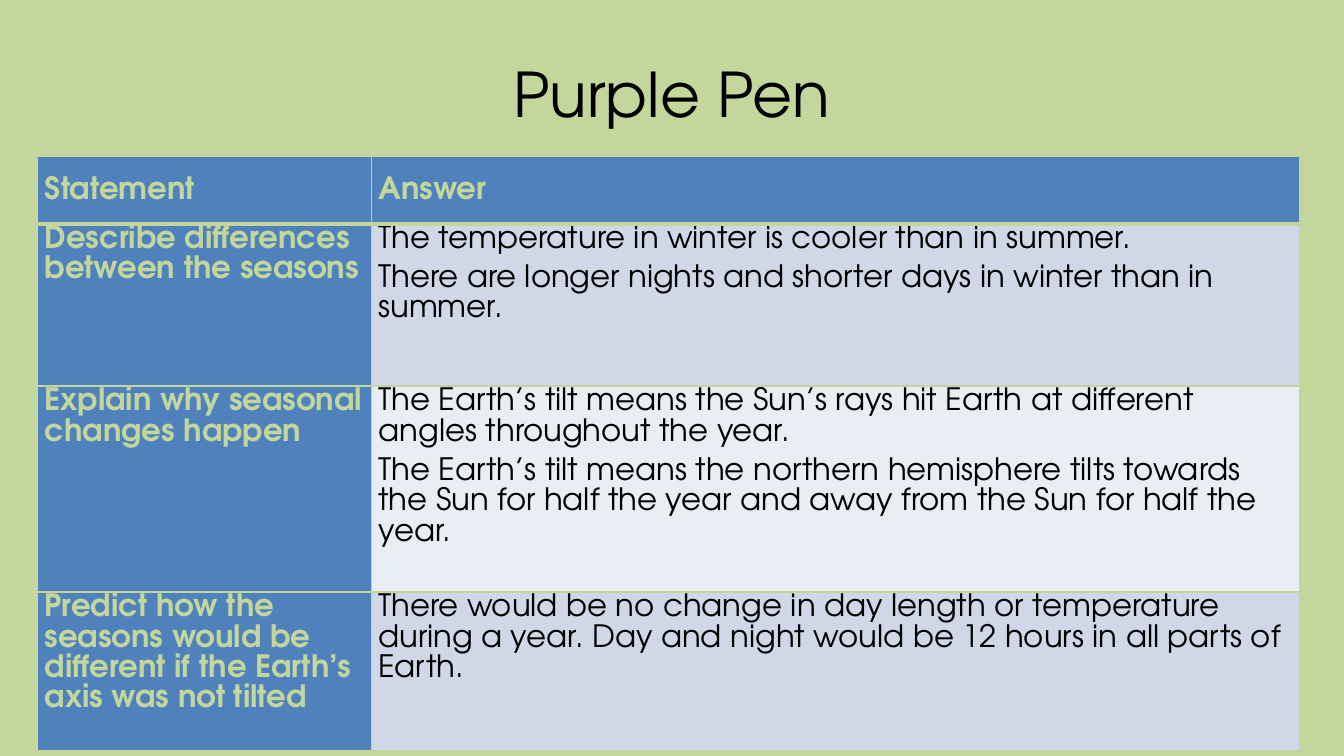
from dataclasses import dataclass

from lxml import etree
from pptx import Presentation
from pptx import util as u
from pptx.dml.color import RGBColor
from pptx.enum import text
from pptx.oxml import ns


@dataclass(frozen=True)
class Theme:
    font: str = "TeX Gyre Adventor"
    title_size: float = 44
    body_size: float = 22
    page: str = "C3D69B"
    ink: str = "000000"
    header: str = "4F81BD"
    bands: tuple[str, str] = ("D0D8E8", "E9EDF4")


@dataclass(frozen=True)
class Row:
    height: float
    statement: str
    answers: tuple[str, ...]


THEME = Theme()
COLUMN_WIDTHS = (238.3, 663.1)
ROWS = (
    Row(48.2, "Statement", ("Answer",)),
    Row(115.9, "Describe differences between the seasons", (
        "The temperature in winter is cooler than in summer.",
        "There are longer nights and shorter days in winter than in summer.")),
    Row(136.1, "Explain why seasonal changes happen", (
        "The Earth’s tilt means the Sun’s rays hit Earth at different angles "
        "throughout the year.",
        "The Earth’s tilt means the northern hemisphere tilts towards the Sun "
        "for half the year and away from the Sun for half the year.")),
    Row(90.7, "Predict how the seasons would be different if the Earth’s axis "
        "was not tilted", (
            "There would be no change in day length or temperature during a year. "
            "Day and night would be 12 hours in all parts of Earth.",)),
)


def write(p, content: str, *, size: float, color: str, bold: bool = False,
          align=text.PP_ALIGN.LEFT, spacing: float = 1.0,
          before: float = 0, after: float = 0) -> None:
    """Put one formatted run into a paragraph."""
    p.alignment, p.line_spacing = align, spacing
    p.space_before, p.space_after = u.Pt(before), u.Pt(after)
    r = p.add_run()
    r.text = content
    r.font.name, r.font.size, r.font.bold = THEME.font, u.Pt(size), bold
    r.font.color.rgb = RGBColor.from_string(color)


def set_borders(cell, bottom: float, top: float) -> None:
    """Draw the cell's four edges in the page colour."""
    tc_pr = cell._tc.get_or_add_tcPr()
    widths = {"lnL": 1, "lnR": 1, "lnT": top, "lnB": bottom}
    for i, (tag, width) in enumerate(widths.items()):
        ln = etree.Element(ns.qn(f"a:{tag}"), w=str(u.Pt(width)))
        fill = etree.SubElement(ln, ns.qn("a:solidFill"))
        etree.SubElement(fill, ns.qn("a:srgbClr"), val=THEME.page)
        tc_pr.insert(i, ln)


def fill_cell(cell, paragraphs: tuple[str, ...], *, fill: str, color: str,
              bold: bool, row: int) -> None:
    """Fill one table cell with text, colour and borders."""
    is_header = row == 0
    cell.fill.solid()
    cell.fill.fore_color.rgb = RGBColor.from_string(fill)
    cell.margin_left = cell.margin_right = u.Pt(5)
    cell.margin_top = cell.margin_bottom = 0
    cell.vertical_anchor = text.MSO_ANCHOR.MIDDLE if is_header else text.MSO_ANCHOR.TOP
    set_borders(cell, bottom=3 if is_header else 1, top=3 if row == 1 else 1)
    tf = cell.text_frame
    for i, content in enumerate(paragraphs):
        p = tf.add_paragraph() if i else tf.paragraphs[0]
        write(p, content, size=THEME.body_size, color=color, bold=bold,
              spacing=1.07, before=3 if i else 0, after=0 if is_header else 3)


def add_title(s, content: str) -> None:
    """Add the centred slide title."""
    sp = s.shapes.add_textbox(u.Pt(48), u.Pt(21.6), u.Pt(864), u.Pt(90))
    tf = sp.text_frame
    tf.word_wrap = True
    tf.vertical_anchor = text.MSO_ANCHOR.MIDDLE
    write(tf.paragraphs[0], content, size=THEME.title_size, color=THEME.ink,
          align=text.PP_ALIGN.CENTER)


def add_answer_table(s, rows: tuple[Row, ...]) -> None:
    """Add the table of statements and answers."""
    table = s.shapes.add_table(
        len(rows), len(COLUMN_WIDTHS), u.Pt(27), u.Pt(111.6),
        u.Pt(sum(COLUMN_WIDTHS)), u.Pt(sum(row.height for row in rows))).table
    for column, width in zip(table.columns, COLUMN_WIDTHS):
        column.width = u.Pt(width)
    for i, row in enumerate(rows):
        table.rows[i].height = u.Pt(row.height)
        is_header = i == 0
        fill_cell(table.cell(i, 0), (row.statement,), fill=THEME.header,
                  color=THEME.page, bold=True, row=i)
        fill_cell(table.cell(i, 1), row.answers,
                  fill=THEME.header if is_header else THEME.bands[(i - 1) % 2],
                  color=THEME.page if is_header else THEME.ink,
                  bold=is_header, row=i)


def main() -> None:
    # Page
    prs = Presentation()
    prs.slide_width, prs.slide_height = u.Pt(960), u.Pt(540)
    s = prs.slides.add_slide(prs.slide_layouts[6])
    s.background.fill.solid()
    s.background.fill.fore_color.rgb = RGBColor.from_string(THEME.page)

    # Content
    add_title(s, "Purple Pen")
    add_answer_table(s, ROWS)
    prs.save("out.pptx")


if __name__ == "__main__":
    main()
